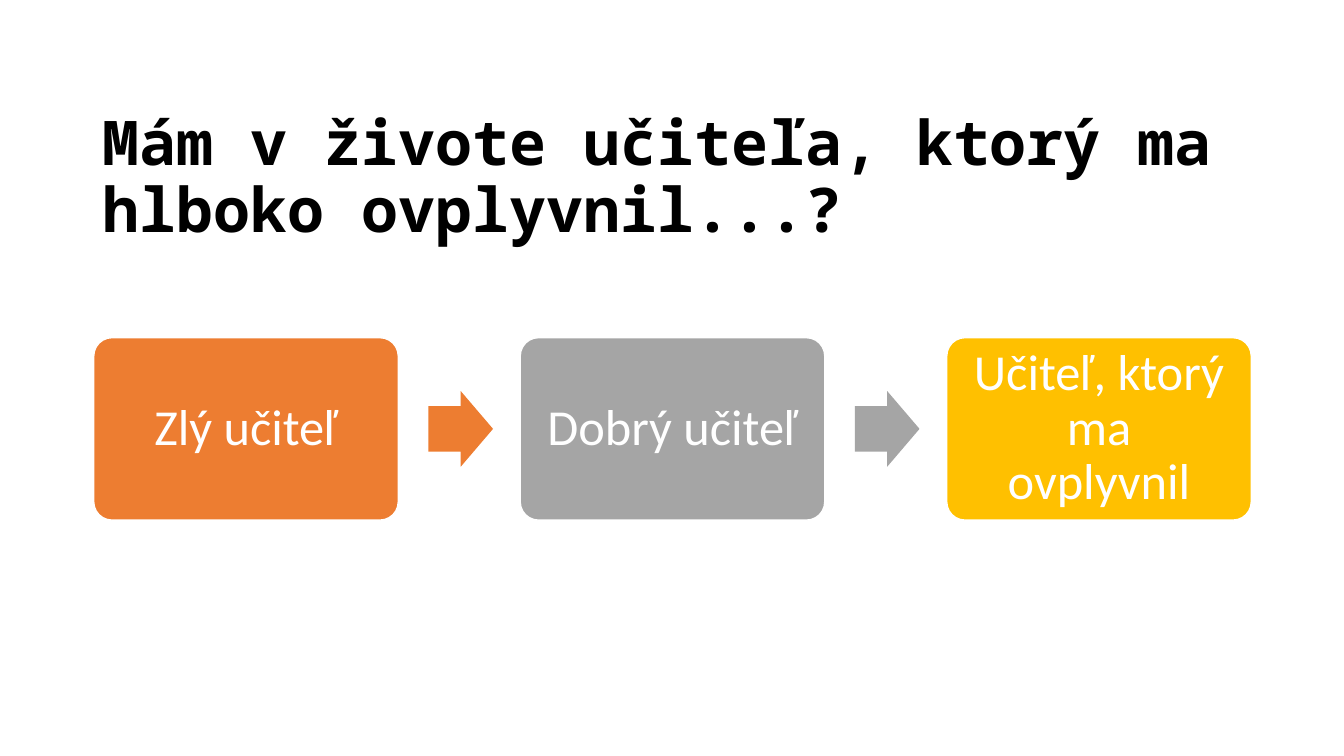
from pptx import Presentation
from pptx.dml.color import RGBColor
from pptx.enum.shapes import MSO_SHAPE
from pptx.enum.text import MSO_ANCHOR, MSO_AUTO_SIZE, PP_ALIGN
from pptx.util import Pt

PX = 9144
ROUNDED = MSO_SHAPE.ROUNDED_RECTANGLE
ARROW = MSO_SHAPE.RIGHT_ARROW
MIDDLE = MSO_ANCHOR.MIDDLE
NO_FIT = MSO_AUTO_SIZE.NONE
LEFT = PP_ALIGN.LEFT
CENTER = PP_ALIGN.CENTER

BLACK = RGBColor(0x00, 0x00, 0x00)
WHITE = RGBColor(0xFF, 0xFF, 0xFF)
ORANGE = RGBColor(0xED, 0x7D, 0x31)
GRAY = RGBColor(0xA5, 0xA5, 0xA5)
GOLD = RGBColor(0xFF, 0xC0, 0x00)

TEACHERS = [
    ("Zlý učiteľ", ORANGE),
    ("Dobrý učiteľ", GRAY),
    ("Učiteľ, ktorý ma ovplyvnil", GOLD),
]
STEP_LEFT, STEP_TOP, STEP_WIDTH, STEP_HEIGHT = 93, 335, 302, 181
STEP_PITCH = 423
ARROW_OFFSET, ARROW_WIDTH, ARROW_HEIGHT = 332, 64, 75
ARROW_TOP = STEP_TOP + (STEP_HEIGHT - ARROW_HEIGHT) // 2
INSET = 20


def add_filled(page, kind, left, top, width, height, color):
    shape = page.shapes.add_shape(kind, left * PX, top * PX, width * PX, height * PX)
    shape.shadow.inherit = False
    shape.fill.solid()
    shape.fill.fore_color.rgb = color
    return shape


def set_text(frame, text, align, font_name, size, color):
    frame.word_wrap = True
    frame.auto_size = NO_FIT
    frame.vertical_anchor = MIDDLE
    para = frame.paragraphs[0]
    para.text = text
    para.alignment = align
    para.line_spacing = 0.9
    para.font.name = font_name
    para.font.size = Pt(size)
    para.font.color.rgb = color
    return para


deck = Presentation()
deck.slide_width = 1333 * PX
deck.slide_height = 750 * PX
page = deck.slides.add_slide(deck.slide_layouts[5])

title = page.shapes.title
title.left, title.top = 92 * PX, 105 * PX
title.width, title.height = 1150 * PX, 145 * PX
heading = set_text(title.text_frame, "Mám v živote učiteľa, ktorý ma hlboko ovplyvnil...?",
                   LEFT, "Noto Sans Mono", 44, BLACK)
heading.font.bold = True

for index, (label, color) in enumerate(TEACHERS):
    left = STEP_LEFT + index * STEP_PITCH
    step = add_filled(page, ROUNDED, left, STEP_TOP, STEP_WIDTH, STEP_HEIGHT, color)
    step.adjustments[0] = 0.1
    step.line.color.rgb = WHITE
    step.line.width = Pt(1)
    frame = step.text_frame
    frame.margin_left = frame.margin_right = INSET * PX
    frame.margin_top = frame.margin_bottom = INSET * PX
    set_text(frame, label, CENTER, "Calibri", 36, WHITE)

    if index < len(TEACHERS) - 1:
        arrow = add_filled(page, ARROW, left + ARROW_OFFSET, ARROW_TOP,
                           ARROW_WIDTH, ARROW_HEIGHT, color)
        arrow.adjustments[0] = 0.6
        arrow.adjustments[1] = 0.5
        arrow.line.fill.background()

deck.save("out.pptx")
